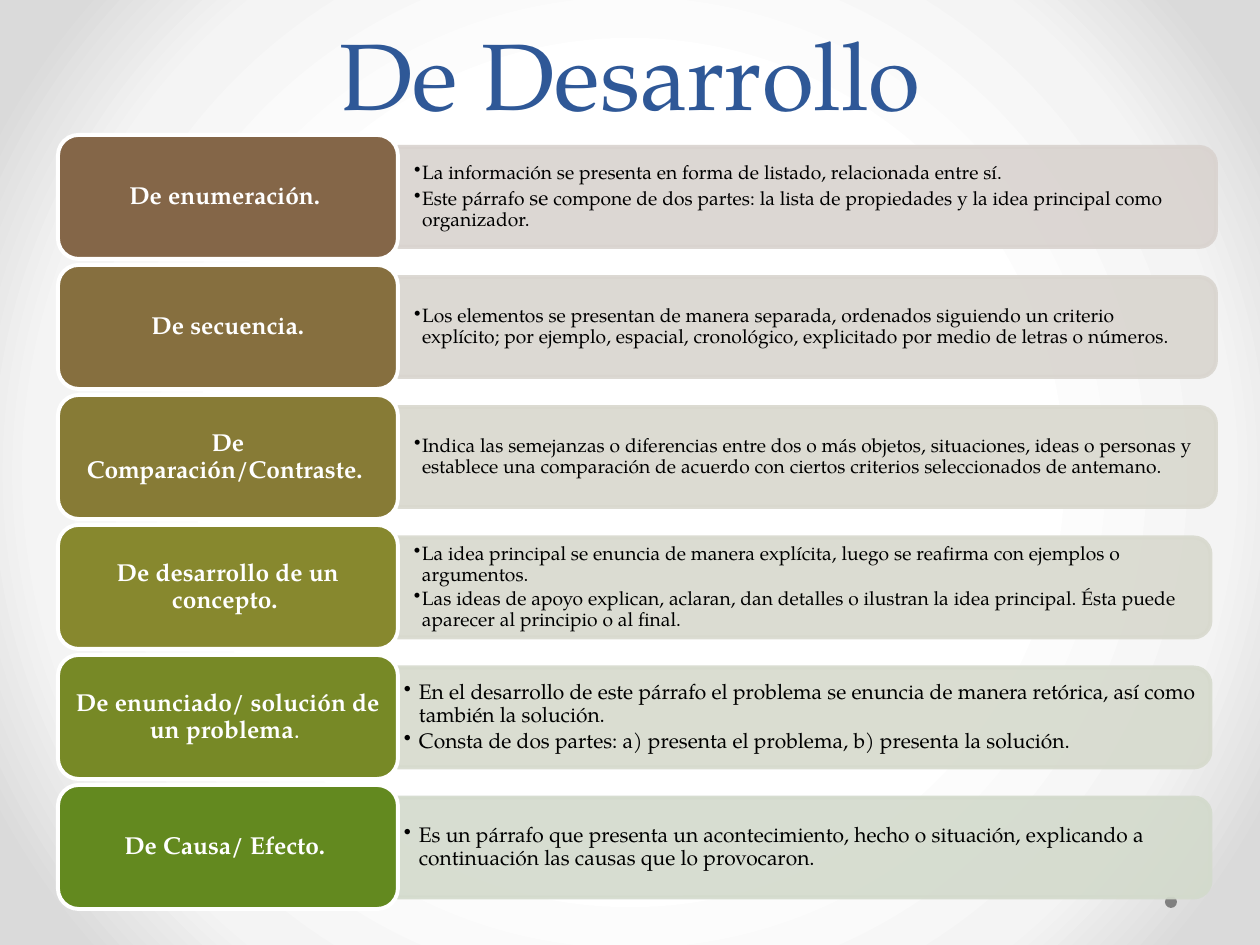
from lxml.etree import SubElement
from pptx import Presentation
from pptx.dml.color import RGBColor
from pptx.enum.shapes import MSO_SHAPE
from pptx.enum.text import MSO_ANCHOR, PP_ALIGN
from pptx.oxml import parse_xml
from pptx.oxml.ns import nsdecls, qn
from pptx.util import Pt

EMU_PER_PX = 914400 / 126
ROW_PITCH = 130
WIDE, NARROW = 818, 813
LOOSE = {"insets": (16, 8), "indent": 8}
TIGHT = {"insets": (6, 4), "indent": 15}

ROWS = [
    ("846648", "D9D3CF", WIDE, LOOSE, [("De enumeración. ", 14, True)], [
        [("La información se presenta en forma de listado, relacionada entre sí.", 11, False)],
        [("Este párrafo ", 11, False), ("se", 12, False),
         (" compone de dos partes: la lista de propiedades y la idea principal como organizador.",
          11, False)]]),
    ("866F3F", "D9D5CF", WIDE, LOOSE, [("De secuencia.", 14, True)], [
        [("Los elementos se presentan de manera separada, ordenados siguiendo un criterio "
          "explícito; por ejemplo, espacial, cronológico, explicitado por medio de letras o "
          "números.", 11, False)]]),
    ("877B36", "D9D8CE", WIDE, LOOSE, [("De Comparación/Contraste. ", 14, True)], [
        [("Indica las semejanzas o diferencias entre dos o más objetos, situaciones, ideas o "
          "personas y establece una comparación de acuerdo con ciertos criterios seleccionados "
          "de antemano.", 11, False)]]),
    ("87882E", "D8D9CE", NARROW, LOOSE, [("De desarrollo de un concepto. ", 14, True)], [
        [("La idea principal se enuncia de manera explícita, luego se reafirma con ejemplos o "
          "argumentos.", 11, False)],
        [("Las ideas de apoyo explican, aclaran, dan detalles o ilustran la idea principal. "
          "Ésta puede aparecer al principio o al final.", 11, False)]]),
    ("778926", "D6DACD", NARROW, TIGHT,
     [("De enunciado/ solución de un problema", 14, True), (". ", 14, False)], [
        [("En el desarrollo de este párrafo el problema se enuncia de manera retórica, así como "
          "también la solución.", 12, False)],
        [("Consta de dos partes: a) presenta el problema, b) presenta la solución.", 12, False)]]),
    ("63891F", "D3DACC", NARROW, TIGHT, [("De Causa/ Efecto. ", 14, True)], [
        [("Es un párrafo que presenta un acontecimiento, hecho o situación, explicando a "
          "continuación las causas que lo provocaron.", 12, False)]]),
]


def px(length):
    return round(length * EMU_PER_PX)


def color(value):
    return RGBColor.from_string(value)


class SlideBuilder:
    """Holds the text style and the current slide, and adds each kind of element."""

    font_name = "TeX Gyre Pagella"

    def __init__(self, slide):
        self.slide = slide

    def background(self, stops):
        self.slide.background.fill.solid()
        properties = self.slide.element.find(".//" + qn("p:bgPr"))
        stop_list = "".join(
            f'<a:gs pos="{position * 1000}"><a:srgbClr val="{value}"/></a:gs>'
            for position, value in stops)
        gradient = parse_xml(
            f'<a:gradFill {nsdecls("a")} rotWithShape="1"><a:gsLst>{stop_list}</a:gsLst>'
            '<a:path path="circle"><a:fillToRect l="50000" t="50000" r="50000" b="50000"/>'
            '</a:path></a:gradFill>')
        properties.replace(properties.find(qn("a:solidFill")), gradient)

    def shape(self, kind, box, fill, line=None, opacity=None, rotation=0):
        shape = self.slide.shapes.add_shape(kind, *map(px, box))
        shape.shadow.inherit = False
        shape.rotation = rotation
        shape.fill.solid()
        shape.fill.fore_color.rgb = color(fill)
        if line:
            shape.line.color.rgb = color(line)
            shape.line.width = Pt(2.25)
        else:
            shape.line.fill.background()
        if opacity:
            for element in shape.element.spPr.iter(qn("a:srgbClr")):
                SubElement(element, qn("a:alpha"), val=str(opacity * 1000))
        return shape

    def text_box(self, box):
        return self.slide.shapes.add_textbox(*map(px, box))

    def add_text(self, shape, paragraphs, fill, insets, paragraph_format,
                 anchor=MSO_ANCHOR.MIDDLE, indent=0):
        frame = shape.text_frame
        side, end = map(px, insets)
        frame_format = {"word_wrap": True, "vertical_anchor": anchor,
                        "margin_left": side, "margin_right": side,
                        "margin_top": end, "margin_bottom": end}
        for name, value in frame_format.items():
            setattr(frame, name, value)
        for index, runs in enumerate(paragraphs):
            paragraph = frame.add_paragraph() if index else frame.paragraphs[0]
            for name, value in paragraph_format.items():
                setattr(paragraph, name, value)
            if indent:
                self.bullet(paragraph, indent)
            for text, size, bold in runs:
                run = paragraph.add_run()
                run.text = text
                run.font.color.rgb = color(fill)
                font_format = {"name": self.font_name, "size": Pt(size), "bold": bold}
                for name, value in font_format.items():
                    setattr(run.font, name, value)

    def bullet(self, paragraph, indent):
        properties = paragraph._p.get_or_add_pPr()
        properties.set("marL", str(px(indent)))
        properties.set("indent", str(-px(indent)))
        SubElement(properties, qn("a:buChar"), char="•")

    def title(self, text):
        self.add_text(self.text_box((63, 0, 1134, 135)), [[(text, 54, False)]], "2F5897", (13, 6),
                      {"alignment": PP_ALIGN.CENTER, "line_spacing": Pt(58)}, MSO_ANCHOR.BOTTOM)

    def row(self, top, label_fill, bar_fill, bar_width, layout, label, details):
        left, label_width, label_height, bar_height, text_height = 58, 340, 124, 100, 90
        bar_left, middle = left + label_width, top + label_height // 2
        bar_box = (bar_left + (bar_width - bar_height) // 2, middle - bar_width // 2,
                   bar_height, bar_width)
        self.shape(MSO_SHAPE.ROUND_2_SAME_RECTANGLE, bar_box, bar_fill, bar_fill, 90, 90)
        text_box = self.text_box((bar_left, middle - text_height // 2,
                                  bar_width - 5, text_height))
        self.add_text(text_box, details, "000000", paragraph_format={
            "alignment": PP_ALIGN.LEFT, "line_spacing": 0.9, "space_after": Pt(2)}, **layout)
        label_shape = self.shape(MSO_SHAPE.ROUNDED_RECTANGLE,
                                 (left, top, label_width, label_height), label_fill, "FFFFFF")
        self.add_text(label_shape, [label], "FFFFFF", (8, 4),
                      {"alignment": PP_ALIGN.CENTER, "line_spacing": 0.9})


def main():
    presentation = Presentation()
    presentation.slide_width, presentation.slide_height = px(1260), px(945)
    builder = SlideBuilder(presentation.slides.add_slide(presentation.slide_layouts[6]))
    builder.background([(50, "FFFFFF"), (76, "F4F4F4"), (92, "DADADA")])
    builder.shape(MSO_SHAPE.OVAL, (1165, 896, 12, 12), "808080")
    builder.title("De Desarrollo")
    for index, row in enumerate(ROWS):
        builder.row(135 + index * ROW_PITCH, *row)
    presentation.save("out.pptx")


if __name__ == "__main__":
    main()
